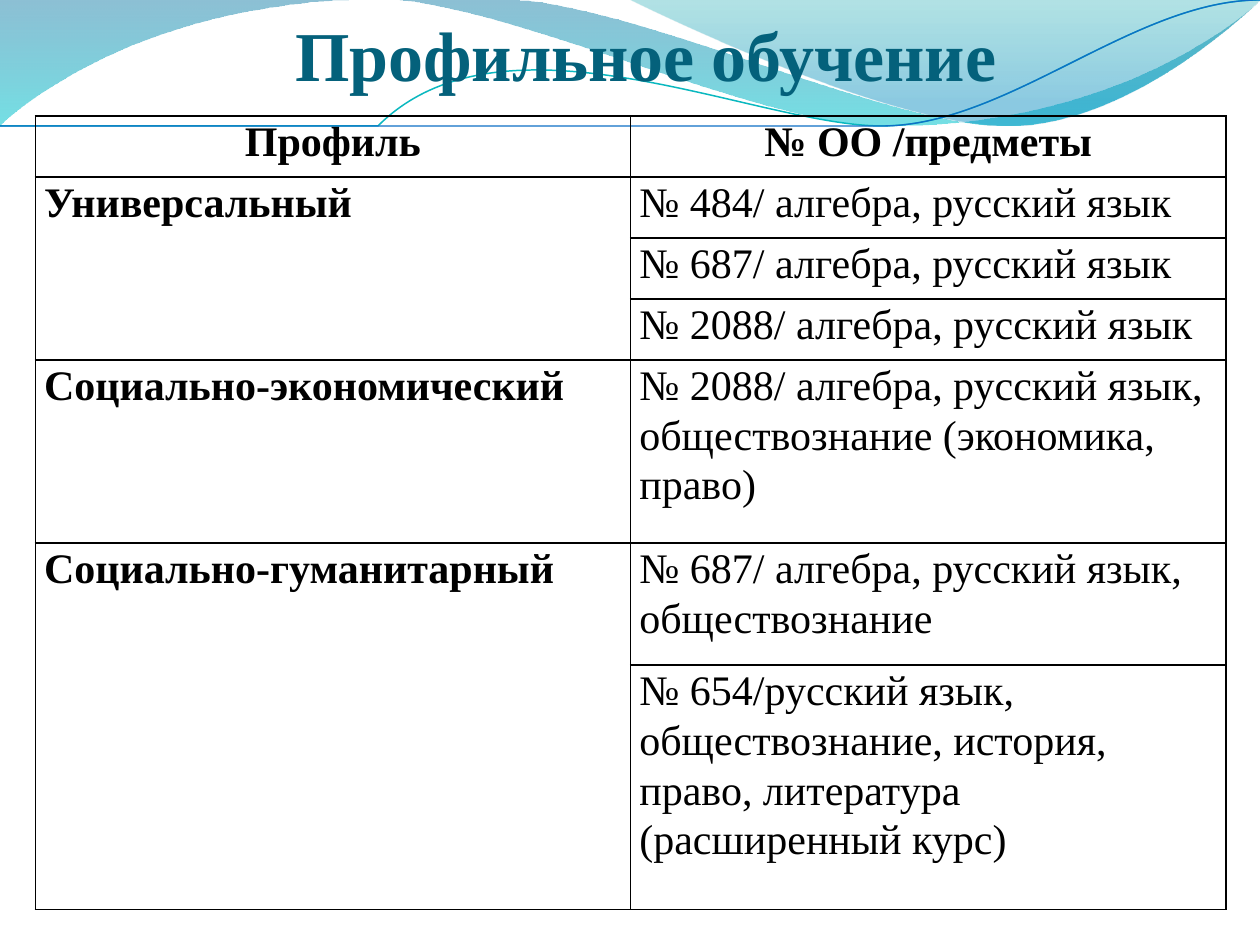
from lxml.etree import SubElement
from pptx import Presentation
from pptx.dml.color import RGBColor
from pptx.enum.text import MSO_ANCHOR, MSO_AUTO_SIZE, PP_ALIGN
from pptx.oxml.ns import qn
from pptx.util import Inches, Pt

COLS, ROWS = 10, 7.5
UNIT = Inches(1)
FONT = "Times New Roman"
HEX = {
    "title": "04617B", "ink": "000000", "deep": "0074A1", "aqua": "00C6CF",
    "teal": "00A1A9", "sky": "008BBF", "mint": "0AB8BF", "blue": "0F6FC6",
}

BANDS = [
    ([(0, 0), [(4.4, -0.01)],
      [(4.76, 0.17), (6.64, 0.63), (7.58, 0.63)],
      [(8.53, 0.63), (9.58, 0.26), (10, 0.09)], [(10.01, 0.36)],
      [(9.83, 0.44), (8.7, 0.76), (7.46, 0.75)],
      [(6.22, 0.75), (3.82, 0.28), (2.57, 0.34)],
      [(1.29, 0.36), (0.46, 0.83), (-0.01, 1.13)]],
     [(0, "deep", 45), (1, "aqua", 55)]),
    ([(4.79, -0.01), [(5.09, 0.11), (6.82, 0.62), (7.69, 0.65)],
      [(8.56, 0.69), (9.61, 0.32), (10, 0.21)], [(10, 0)]],
     [(0, "teal", 30), (0.8, "sky", 45)]),
]
LINES = [
    ([(0, 1.11), [(0.48, 0.93), (1.58, 0.57), (2.77, 0.52)],
      [(3.95, 0.47), (5.93, 0.89), (7.13, 0.8)],
      [(8.33, 0.71), (9.38, 0.15), (9.98, -0.02)]], "mint", 0.85),
    ([(0, 1.04), [(0.47, 0.96), (1.64, 0.61), (2.83, 0.56)],
      [(4.03, 0.51), (5.97, 0.84), (7.17, 0.75)],
      [(8.36, 0.67), (9.41, 0.21), (10, 0.06)]], "blue", 0.75),
]
HEAD = ("Профиль", "№ ОО /предметы")
GROUPS = [
    ("Универсальный", [
        ("№ 484/ алгебра, русский язык", 1),
        ("№ 687/ алгебра, русский язык", 1),
        ("№ 2088/ алгебра, русский язык", 1)]),
    ("Социально-экономический", [
        ("№ 2088/ алгебра, русский язык, обществознание (экономика, право)", 3)]),
    ("Социально-гуманитарный", [
        ("№ 687/ алгебра, русский язык, обществознание", 2),
        ("№ 654/русский язык, обществознание, история, право, литература "
         "(расширенный курс)", 4)]),
]


def tint(name):
    return RGBColor.from_string(HEX[name])


def span(*box):
    return [round(n * UNIT) for n in box]


def write(frame, text, size=24, bold=False, color="ink", align=PP_ALIGN.LEFT, gap=None):
    para = frame.paragraphs[0]
    para.alignment, para.line_spacing = align, gap
    run = para.add_run()
    run.text = text
    font = run.font
    font.name, font.size, font.bold = FONT, Pt(size), bold
    font.color.rgb = tint(color)


def curve(slide, box, start, parts, close):
    left, top = box[:2]
    pen = slide.shapes.build_freeform(left + start[0], top + start[1], scale=UNIT)
    spots = [(left + x, top + y) for part in parts for x, y in part]
    pen.add_line_segments(spots, close=close)
    shape = pen.convert_to_shape()
    shape.shadow.inherit = False
    steps = iter(list(shape.element.iter(qn("a:lnTo"))))
    for part in parts:
        nodes = [next(steps) for _ in part]
        if len(nodes) == 3:
            first, *rest = nodes
            first.tag = qn("a:cubicBezTo")
            for node in rest:
                first.append(node[0])
                node.getparent().remove(node)
    return shape


def band(slide, box, route, stops):
    shape = curve(slide, box, route[0], route[1:], True)
    shape.line.fill.background()
    shape.fill.gradient()
    shape.fill.gradient_angle = 270
    for stop, (place, name, _) in zip(shape.fill.gradient_stops, stops):
        stop.position = place
        stop.color.rgb = tint(name)
    for node, (_, _, share) in zip(shape.element.spPr.iter(qn("a:srgbClr")), stops):
        SubElement(node, qn("a:alpha"), val=str(share * 1000))


def waves(slide, box):
    for route, stops in BANDS:
        band(slide, box, route, stops)
    for route, name, width in LINES:
        shape = curve(slide, box, route[0], route[1:], False)
        shape.fill.background()
        shape.line.color.rgb = tint(name)
        shape.line.width = Pt(width)


def title(slide, box):
    shape = slide.shapes.title
    slide.shapes.element.append(shape.element)
    shape.left, shape.top, shape.width, shape.height = span(*box)
    frame = shape.text_frame
    frame.auto_size = MSO_AUTO_SIZE.NONE
    frame.word_wrap = True
    frame.vertical_anchor = MSO_ANCHOR.BOTTOM
    frame.margin_left = frame.margin_right = frame.margin_bottom = 0
    frame.margin_top = Inches(0.05)
    write(frame, "Профильное обучение", size=40, bold=True, color="title",
          align=PP_ALIGN.CENTER)


def style(cell):
    cell.fill.background()
    cell.margin_left = cell.margin_right = Inches(0.07)
    cell.margin_top = cell.margin_bottom = 0
    props = cell._tc.get_or_add_tcPr()
    for spot, side in enumerate(("lnL", "lnR", "lnT", "lnB")):
        line = SubElement(props, qn("a:" + side), w=str(Pt(1)))
        fill = SubElement(line, qn("a:solidFill"))
        SubElement(fill, qn("a:srgbClr"), val=HEX["ink"])
        props.insert(spot, line)


def grid(slide, box):
    sizes = [1] + [size for _, items in GROUPS for _, size in items]
    table = slide.shapes.add_table(len(sizes), 2, *span(*box)).table
    table.first_row = table.horz_banding = False
    for row, size in zip(table.rows, sizes):
        row.height = round(box[3] * UNIT * size / sum(sizes))
    for cell in table.iter_cells():
        style(cell)
    for col, text in enumerate(HEAD):
        write(table.cell(0, col).text_frame, text, bold=True,
              align=PP_ALIGN.CENTER, gap=1.07)
    top = 1
    for name, items in GROUPS:
        lead = table.cell(top, 0)
        if len(items) > 1:
            lead.merge(table.cell(top + len(items) - 1, 0))
        write(lead.text_frame, name, bold=True, gap=1.07)
        for row, (text, _) in enumerate(items, top):
            write(table.cell(row, 1).text_frame, text, gap=1.07)
        top += len(items)


def main():
    deck = Presentation()
    deck.slide_width, deck.slide_height = span(COLS, ROWS)
    slide = deck.slides.add_slide(deck.slide_layouts[5])
    waves(slide, (0, 0, COLS, 1.14))
    title(slide, (0.75, 0.21, 8.75, 0.55))
    grid(slide, (0.28, 0.92, 9.45, 6.3))
    deck.save("out.pptx")


if __name__ == "__main__":
    main()
